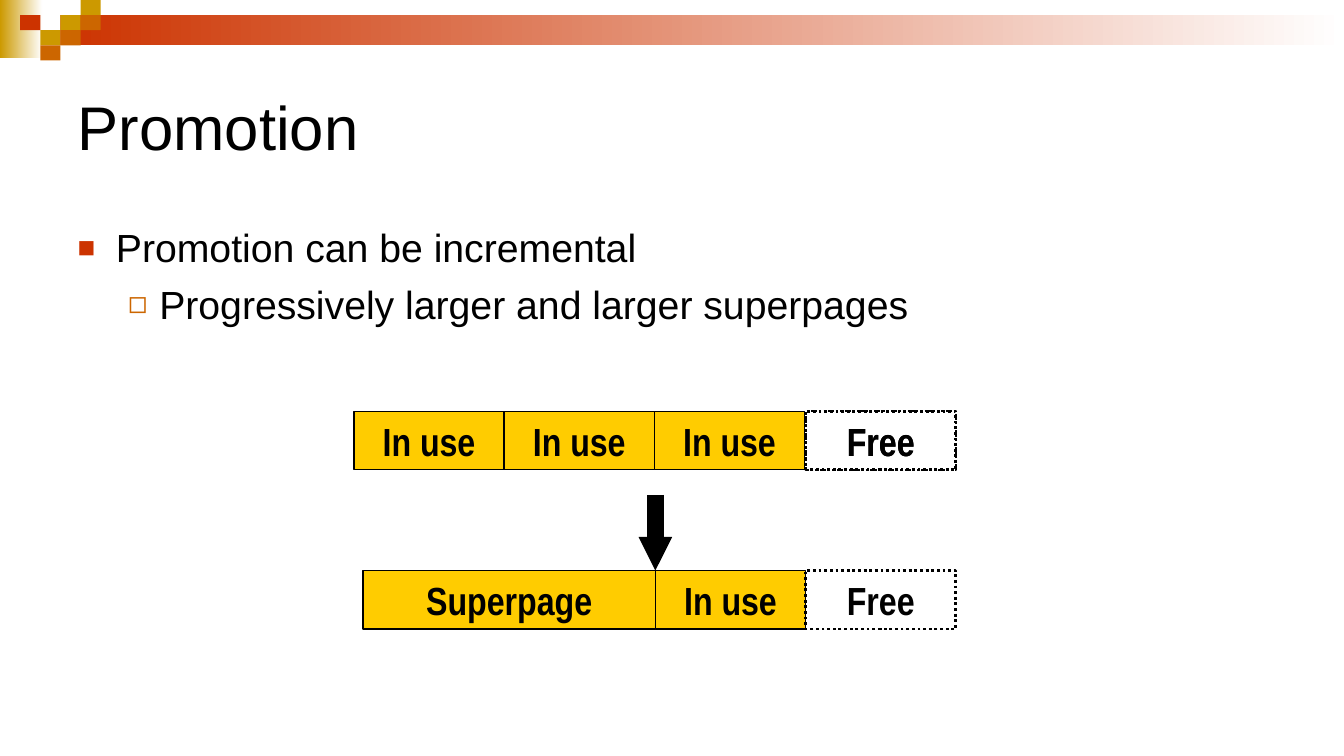
"""Builds the slide on incremental promotion of superpages."""
from dataclasses import dataclass
from typing import Optional

from lxml import etree
from pptx import Presentation
from pptx import util as u
from pptx.dml.color import RGBColor
from pptx.enum import dml, shapes, text
from pptx.oxml import ns


@dataclass(frozen=True)
class Theme:
    gold: str = "CC9900"
    orange: str = "CC6600"
    red: str = "CC3300"
    yellow: str = "FFCC00"
    black: str = "000000"
    white: str = "FFFFFF"
    font: str = "Arial"
    narrow: str = "Arial Narrow"
    title_size: float = 44
    text_size: float = 28


@dataclass(frozen=True)
class Tile:
    left: float
    top: float
    width: float
    height: float
    color: str
    fade: Optional[str] = None


@dataclass(frozen=True)
class PageBox:
    label: str
    left: float
    top: float
    width: float
    fill: Optional[str]
    line: float


@dataclass(frozen=True)
class Bullet:
    label: str
    level: int
    margin: float
    hanging: float
    mark: str
    color: str
    percent: int


THEME = Theme()
CELL_WIDTH, CELL_HEIGHT = 1.49, 0.58
ROW_LEFT, MIDDLE = 3.51, 6.5
BEFORE_TOP, AFTER_TOP = 4.08, 5.66
FREE_LEFT = MIDDLE + CELL_WIDTH
SQUARE_WIDTH, SQUARE_HEIGHT = 0.2, 0.15

SQUARES = [(3, 1, THEME.gold), (4, 0, THEME.gold), (4, 1, THEME.orange),
           (2, 2, THEME.gold), (1, 1, THEME.red), (3, 2, THEME.orange),
           (2, 3, THEME.orange)]
TILES = [
    Tile(0, 0, 0.42, 0.58, THEME.gold, THEME.white),
    Tile(0.6, 0.15, 12.73, 0.3, THEME.red, THEME.white),
    *(Tile(column * SQUARE_WIDTH, row * SQUARE_HEIGHT, SQUARE_WIDTH, SQUARE_HEIGHT, color)
      for column, row, color in SQUARES),
]
BULLETS = [
    Bullet("Promotion can be incremental", 0, 0.38, 0.38, "■", THEME.red, 75),
    Bullet("Progressively larger and larger superpages", 1, 0.81, 0.31, "◻", THEME.orange, 80),
]
PAGE_BOXES = [
    PageBox("Free", FREE_LEFT, BEFORE_TOP, CELL_WIDTH, None, 1.5),
    *(PageBox("In use", ROW_LEFT + i * CELL_WIDTH, BEFORE_TOP, CELL_WIDTH, THEME.yellow, 1)
      for i in range(3)),
    PageBox("Free", FREE_LEFT, BEFORE_TOP, CELL_WIDTH, None, 2),
    PageBox("Superpage", 3.6, AFTER_TOP, 2.9, THEME.yellow, 1),
    PageBox("In use", MIDDLE, AFTER_TOP, CELL_WIDTH, THEME.yellow, 1),
    PageBox("Free", FREE_LEFT, AFTER_TOP, CELL_WIDTH, None, 2),
]


def rgb(color: str) -> RGBColor:
    return RGBColor.from_string(color)


def add_span(para, label: str, size: float, font: str, bold: bool = False) -> None:
    span = para.add_run()
    span.text = label
    span.font.size = u.Pt(size)
    span.font.name = font
    span.font.bold = bold
    span.font.color.rgb = rgb(THEME.black)


def add_rectangle(page, left: float, top: float, width: float, height: float):
    box = page.shapes.add_shape(shapes.MSO_SHAPE.RECTANGLE, u.Inches(left), u.Inches(top),
                                u.Inches(width), u.Inches(height))
    box.shadow.inherit = False
    return box


def add_tile(page, tile: Tile) -> None:
    box = add_rectangle(page, tile.left, tile.top, tile.width, tile.height)
    box.line.fill.background()
    if tile.fade:
        box.fill.gradient()
        box.fill.gradient_angle = 0
        for stop, color in zip(box.fill.gradient_stops, (tile.color, tile.fade)):
            stop.color.rgb = rgb(color)
    else:
        box.fill.solid()
        box.fill.fore_color.rgb = rgb(tile.color)


def add_page_box(page, item: PageBox) -> None:
    box = add_rectangle(page, item.left, item.top, item.width, CELL_HEIGHT)
    box.line.color.rgb = rgb(THEME.black)
    box.line.width = u.Pt(item.line)
    if item.fill:
        box.fill.solid()
        box.fill.fore_color.rgb = rgb(item.fill)
    else:
        box.fill.background()
        box.line.dash_style = dml.MSO_LINE.ROUND_DOT
    box.text_frame.word_wrap = False
    box.text_frame.vertical_anchor = text.MSO_ANCHOR.MIDDLE
    para = box.text_frame.paragraphs[0]
    para.alignment = text.PP_ALIGN.CENTER
    add_span(para, item.label, THEME.text_size, THEME.narrow, bold=True)


def add_arrow(page) -> None:
    arrow = page.shapes.add_connector(shapes.MSO_CONNECTOR.STRAIGHT, u.Inches(MIDDLE),
                                      u.Inches(4.91), u.Inches(MIDDLE), u.Inches(AFTER_TOP))
    arrow.line.color.rgb = rgb(THEME.black)
    arrow.line.width = u.Pt(12)
    etree.SubElement(arrow.line._get_or_add_ln(), ns.qn("a:tailEnd"),
                     type="triangle", w="sm", len="sm")
    etree.SubElement(arrow._element.spPr, ns.qn("a:effectLst"))


def place(box, top: float, height: float) -> None:
    box.left, box.top = u.Inches(0.67), u.Inches(top)
    box.width, box.height = u.Inches(12), u.Inches(height)
    box.text_frame.auto_size = text.MSO_AUTO_SIZE.NONE
    box.text_frame.word_wrap = True


def fill_title(box) -> None:
    place(box, 0.5, 1.5)
    box.text_frame.vertical_anchor = text.MSO_ANCHOR.MIDDLE
    para = box.text_frame.paragraphs[0]
    para.alignment = text.PP_ALIGN.LEFT
    add_span(para, "Promotion", THEME.title_size, THEME.font)


def fill_body(box) -> None:
    place(box, 2.17, 4.25)
    frame = box.text_frame
    for index, bullet in enumerate(BULLETS):
        para = frame.add_paragraph() if index else frame.paragraphs[0]
        para.level = bullet.level
        para.space_before = u.Pt(6.5)
        props = para._p.get_or_add_pPr()
        props.set("marL", str(u.Inches(bullet.margin)))
        props.set("indent", str(-u.Inches(bullet.hanging)))
        color = etree.SubElement(props, ns.qn("a:buClr"))
        etree.SubElement(color, ns.qn("a:srgbClr"), val=bullet.color)
        etree.SubElement(props, ns.qn("a:buSzPct"), val=str(bullet.percent * 1000))
        etree.SubElement(props, ns.qn("a:buFont"), typeface=THEME.font)
        etree.SubElement(props, ns.qn("a:buChar"), char=bullet.mark)
        add_span(para, bullet.label, THEME.text_size, THEME.font)


def main() -> None:
    deck = Presentation()
    deck.slide_width, deck.slide_height = u.Inches(13.33), u.Inches(7.5)
    page = deck.slides.add_slide(deck.slide_layouts[1])
    page.background.fill.solid()
    page.background.fill.fore_color.rgb = rgb(THEME.white)
    for tile in TILES:
        add_tile(page, tile)
    fill_title(page.shapes.title)
    fill_body(page.placeholders[1])
    add_arrow(page)
    for item in PAGE_BOXES:
        add_page_box(page, item)
    deck.save("out.pptx")


if __name__ == "__main__":
    main()
